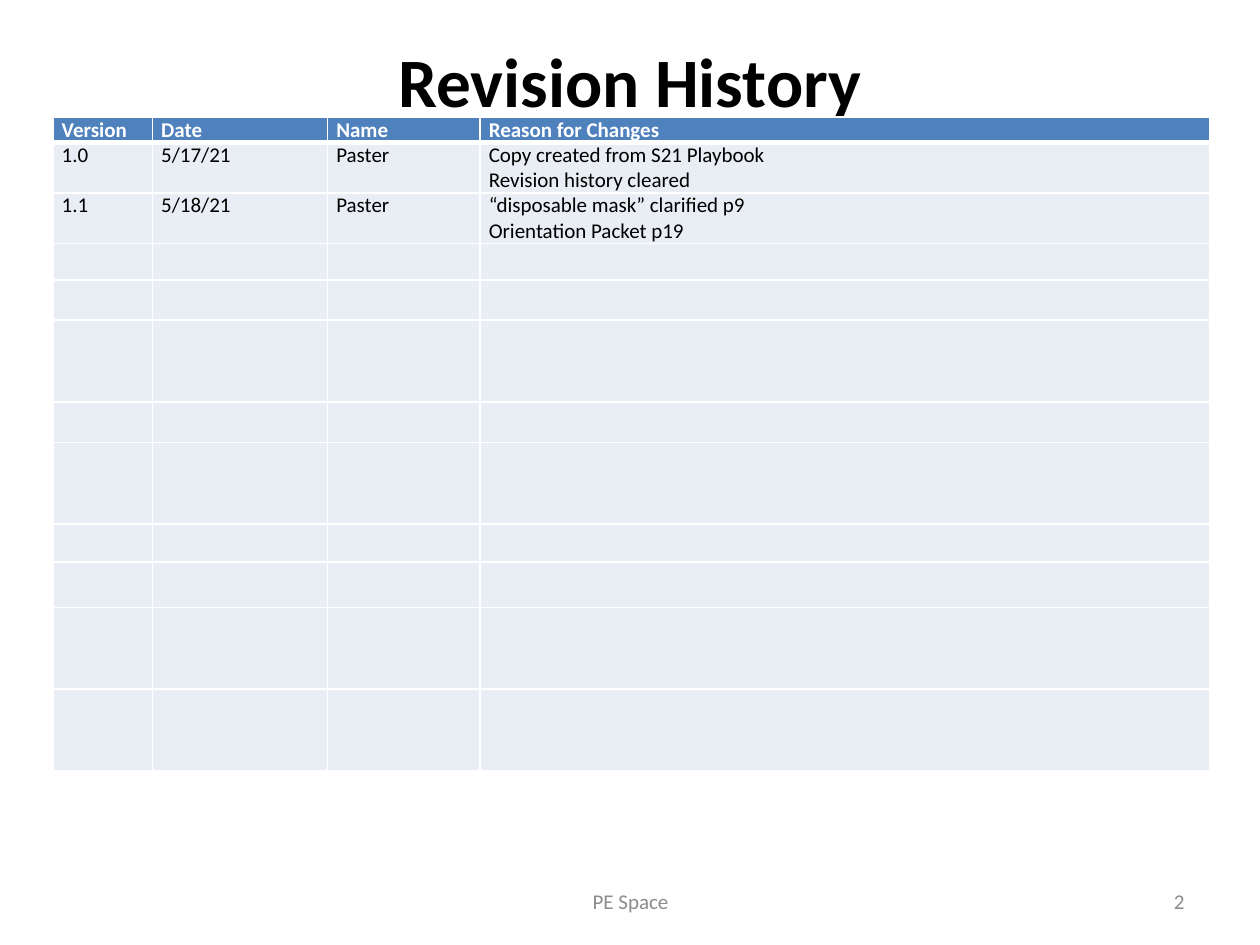
from lxml import etree
from pptx import Presentation
from pptx.dml.color import RGBColor
from pptx.enum.text import MSO_ANCHOR, PP_ALIGN
from pptx.oxml.ns import qn
from pptx.util import Inches, Pt

LEFT, CENTER, RIGHT = PP_ALIGN.LEFT, PP_ALIGN.CENTER, PP_ALIGN.RIGHT
MIDDLE = MSO_ANCHOR.MIDDLE
BLANK_LAYOUT = 6

WHITE, BLACK, GRAY = "FFFFFF", "000000", "8C8C8C"
HEADER_FILL, BODY_FILL = "4F81BD", "E9EDF4"

TITLE_FORMAT = {"size": Pt(39.6), "bold": True}
HEADER_FORMAT = {"size": Pt(12), "bold": True}
BODY_FORMAT = {"size": Pt(12), "bold": False}

COLUMN_WIDTHS = [0.79, 1.39, 1.21, 5.79]
ROW_HEIGHTS = [0.2, 0.4, 0.4, 0.29, 0.32, 0.65, 0.32, 0.65, 0.3, 0.36, 0.65, 0.65]
REVISIONS = [
    ["Version", "Date", "Name", "Reason for Changes"],
    ["1.0", "5/17/21", "Paster", "Copy created from S21 Playbook\nRevision history cleared"],
    ["1.1", "5/18/21", "Paster", "“disposable mask” clarified p9\nOrientation Packet p19"],
]


def rgb(value):
    return RGBColor.from_string(value)


def write_text(text_frame, text, format_values, color, alignment=LEFT):
    text_frame.text = text
    for paragraph in text_frame.paragraphs:
        paragraph.alignment = alignment
        for run in paragraph.runs:
            run.font.name = "Calibri"
            run.font.color.rgb = rgb(color)
            for name, value in format_values.items():
                setattr(run.font, name, value)
        if not paragraph.runs:
            # An empty cell keeps the table's text size
            size = str(int(format_values["size"].pt * 100))
            etree.SubElement(paragraph._p, qn("a:endParaRPr"), sz=size)


def add_label(slide, box, text, format_values, color, alignment):
    shape = slide.shapes.add_textbox(*map(Inches, box))
    text_frame = shape.text_frame
    text_frame.word_wrap = True
    text_frame.vertical_anchor = MIDDLE
    text_frame.margin_top = text_frame.margin_bottom = 0
    write_text(text_frame, text, format_values, color, alignment)


def set_borders(cell, bottom_width):
    properties = cell._tc.get_or_add_tcPr()
    widths = {"a:lnL": 1, "a:lnR": 1, "a:lnT": 1, "a:lnB": bottom_width}
    for index, (tag, width) in enumerate(widths.items()):
        line = etree.Element(qn(tag), w=str(Pt(width)))
        fill = etree.SubElement(line, qn("a:solidFill"))
        etree.SubElement(fill, qn("a:srgbClr"), val=WHITE)
        properties.insert(index, line)


def add_revision_table(slide, box):
    table = slide.shapes.add_table(
        len(ROW_HEIGHTS), len(COLUMN_WIDTHS), *map(Inches, box)).table
    table.horz_banding = False
    for column, width in zip(table.columns, COLUMN_WIDTHS):
        column.width = Inches(width)
    for row_index, height in enumerate(ROW_HEIGHTS):
        row = table.rows[row_index]
        row.height = Inches(height)
        is_header = row_index == 0
        texts = REVISIONS[row_index] if row_index < len(REVISIONS) else [""] * len(COLUMN_WIDTHS)
        for cell, text in zip(row.cells, texts):
            cell.margin_left = cell.margin_right = Inches(0.07)
            cell.margin_top = cell.margin_bottom = 0
            cell.fill.solid()
            cell.fill.fore_color.rgb = rgb(HEADER_FILL if is_header else BODY_FILL)
            set_borders(cell, 3 if is_header else 1)
            write_text(cell.text_frame, text,
                       HEADER_FORMAT if is_header else BODY_FORMAT,
                       WHITE if is_header else BLACK)


def add_footer(slide, box):
    left, top, width, height = box
    number_width = 2.33
    # Footer text in the middle, slide number at the right edge
    add_label(slide, (left + 2.92, top, 3.17, height), "PE Space", BODY_FORMAT, GRAY, CENTER)
    add_label(slide, (left + width - number_width, top, number_width, height),
              "2", BODY_FORMAT, GRAY, RIGHT)


def main():
    presentation = Presentation()
    presentation.slide_width, presentation.slide_height = Inches(10), Inches(7.5)
    slide = presentation.slides.add_slide(presentation.slide_layouts[BLANK_LAYOUT])
    add_label(slide, (0.5, 0.3, 9, 0.66), "Revision History", TITLE_FORMAT, BLACK, CENTER)
    add_revision_table(slide, (0.42, 0.93, sum(COLUMN_WIDTHS), sum(ROW_HEIGHTS)))
    add_footer(slide, (0.5, 6.95, 9, 0.4))
    presentation.save("out.pptx")


if __name__ == "__main__":
    main()
